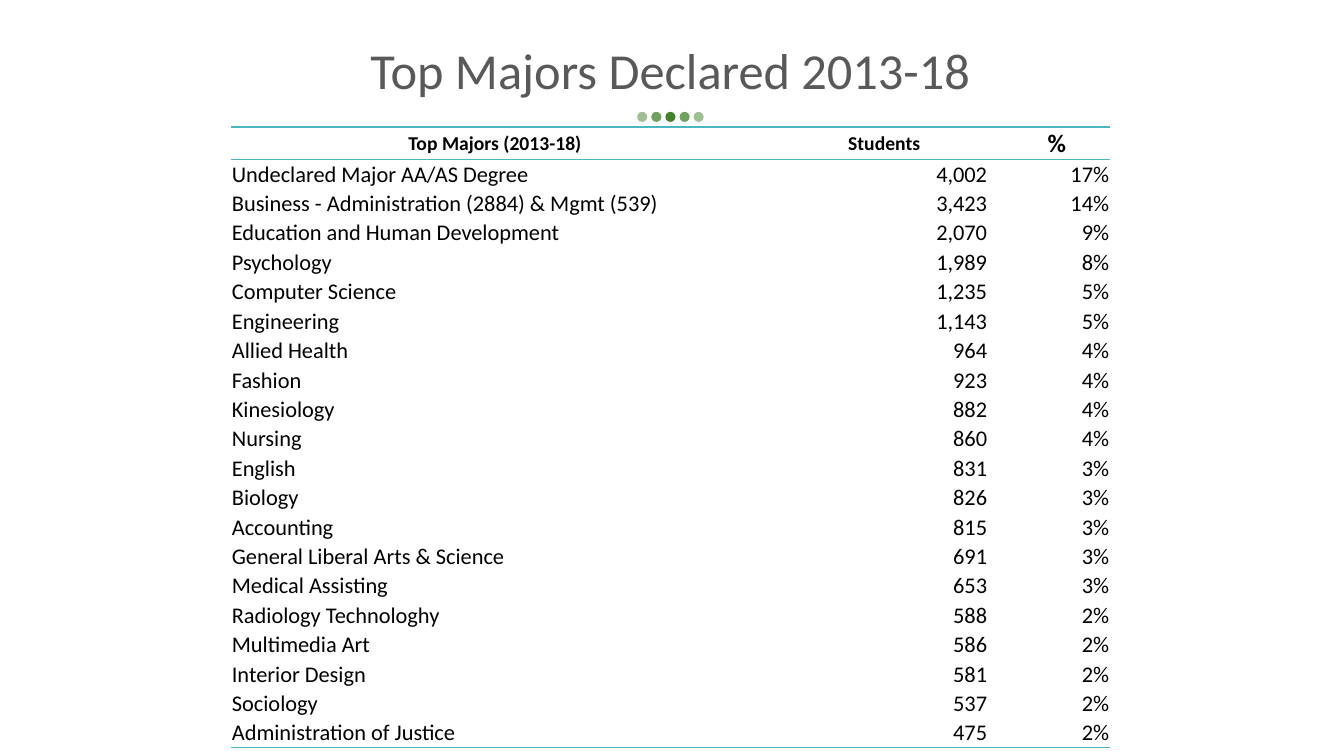
"""Build the slide that lists the top declared majors."""
import pptx
import pptx.dml.color
import pptx.enum.shapes
import pptx.enum.text
import pptx.oxml
import pptx.oxml.ns
import pptx.util
from lxml import etree

Inches, Pt = pptx.util.Inches, pptx.util.Pt
ALIGN = pptx.enum.text.PP_ALIGN
ANCHOR = pptx.enum.text.MSO_ANCHOR
qn = pptx.oxml.ns.qn

TITLE = "Top Majors Declared 2013-18"
HEAD = [("Top Majors (2013-18)", 14), ("Students", 14), ("% ", 18)]
MAJORS = [
    ("Undeclared Major AA/AS Degree", "4,002", "17%"),
    ("Business - Administration (2884) & Mgmt (539)", "3,423", "14%"),
    ("Education and Human Development", "2,070", "9%"),
    ("Psychology", "1,989", "8%"),
    ("Computer Science", "1,235", "5%"),
    ("Engineering", "1,143", "5%"),
    ("Allied Health", "964", "4%"),
    ("Fashion", "923", "4%"),
    ("Kinesiology", "882", "4%"),
    ("Nursing", "860", "4%"),
    ("English", "831", "3%"),
    ("Biology", "826", "3%"),
    ("Accounting", "815", "3%"),
    ("General Liberal Arts & Science", "691", "3%"),
    ("Medical Assisting", "653", "3%"),
    ("Radiology Technologhy", "588", "2%"),
    ("Multimedia Art", "586", "2%"),
    ("Interior Design", "581", "2%"),
    ("Sociology", "537", "2%"),
    ("Administration of Justice", "475", "2%"),
]
WIDTHS = [5.24, 2.48, 1]
HEAD_H, ROW_H = 0.32, 0.29
COLS = [
    (ALIGN.LEFT, ANCHOR.MIDDLE, 0.01),
    (ALIGN.RIGHT, ANCHOR.MIDDLE, 0.22),
    (ALIGN.RIGHT, ANCHOR.BOTTOM, 0.01),
]
DOTS = [50, 75, 100, 75, 50]
FONT = "Calibri"
BLACK, GRAY, TEAL, GREEN = "000000", "595959", "4AB5C4", "43812D"
NO_STYLE = "{2D5ABB26-0587-4C30-8999-92F81FD0307C}"


def paint(target, color):
    """Give a fill or a font a solid colour."""
    fill = getattr(target, "fill", target)
    fill.solid()
    fill.fore_color.rgb = pptx.dml.color.RGBColor.from_string(color)


def write(frame, text, size, color, align, bold=False):
    """Add one formatted run to the first paragraph."""
    para = frame.paragraphs[0]
    para.alignment = align
    run = para.add_run()
    run.text = text
    run.font.name, run.font.size, run.font.bold = FONT, Pt(size), bold
    paint(run.font, color)
    return para


def rule(cell, sides):
    """Draw teal borders on the named sides of a cell."""
    props = cell._tc.get_or_add_tcPr()
    for spot, side in enumerate(sides):
        line = etree.Element(qn("a:ln" + side), w=str(Pt(1)))
        fill = etree.SubElement(line, qn("a:solidFill"))
        etree.SubElement(fill, qn("a:srgbClr"), val=TEAL)
        props.insert(spot, line)


def fill_cell(cell, text, size, align, anchor, right, bold, sides):
    """Format one table cell and write its text."""
    cell.fill.background()
    cell.vertical_anchor = anchor
    cell.margin_left = cell.margin_top = Inches(0.01)
    cell.margin_bottom = Inches(0.01)
    cell.margin_right = Inches(right)
    write(cell.text_frame, text, size, BLACK, align, bold)
    rule(cell, sides)


def add_title(slide):
    """Place and write the title."""
    title = slide.shapes.title
    title.left, title.top = Inches(0.9), Inches(0)
    title.width, title.height = Inches(11.5), Inches(1.45)
    frame = title.text_frame
    frame.auto_size = pptx.enum.text.MSO_AUTO_SIZE.NONE
    frame.vertical_anchor = ANCHOR.MIDDLE
    write(frame, TITLE, 36, GRAY, ALIGN.CENTER).line_spacing = 0.9


def add_majors(slide):
    """Build the table of majors."""
    high = HEAD_H + ROW_H * len(MAJORS)
    shape = slide.shapes.add_table(
        len(MAJORS) + 1, len(HEAD), Inches(2.29), Inches(1.26),
        Inches(sum(WIDTHS)), Inches(high))
    table = shape.table
    table.first_row = table.horz_banding = False
    next(shape._element.iter(qn("a:tableStyleId"))).text = NO_STYLE
    for col, width in zip(table.columns, WIDTHS):
        col.width = Inches(width)
    for num, row in enumerate(table.rows):
        row.height = Inches(ROW_H if num else HEAD_H)
    for col, (text, size) in enumerate(HEAD):
        fill_cell(table.cell(0, col), text, size, ALIGN.CENTER,
                  ANCHOR.MIDDLE, 0.01, True, "TB")
    for num, major in enumerate(MAJORS, 1):
        sides = "B" if num == len(MAJORS) else ""
        for col, text in enumerate(major):
            fill_cell(table.cell(num, col), text, 16, *COLS[col],
                      False, sides)


def add_dots(slide):
    """Draw the row of dots under the title."""
    group = slide.shapes.add_group_shape()
    for num, alpha in enumerate(DOTS):
        dot = group.shapes.add_shape(
            pptx.enum.shapes.MSO_SHAPE.OVAL, Inches(6.32 + 0.14 * num),
            Inches(1.11), Inches(0.1), Inches(0.1))
        dot.shadow.inherit = False
        dot.line.fill.background()
        paint(dot, GREEN)
        if alpha < 100:
            color = next(dot._element.spPr.iter(qn("a:srgbClr")))
            etree.SubElement(color, qn("a:alpha"), val=str(alpha * 1000))


def main():
    """Make and save the slide."""
    deck = pptx.Presentation()
    deck.slide_width, deck.slide_height = Inches(13.33), Inches(7.5)
    slide = deck.slides.add_slide(deck.slide_layouts[5])
    add_title(slide)
    add_majors(slide)
    add_dots(slide)
    deck.save("out.pptx")


if __name__ == "__main__":
    main()
